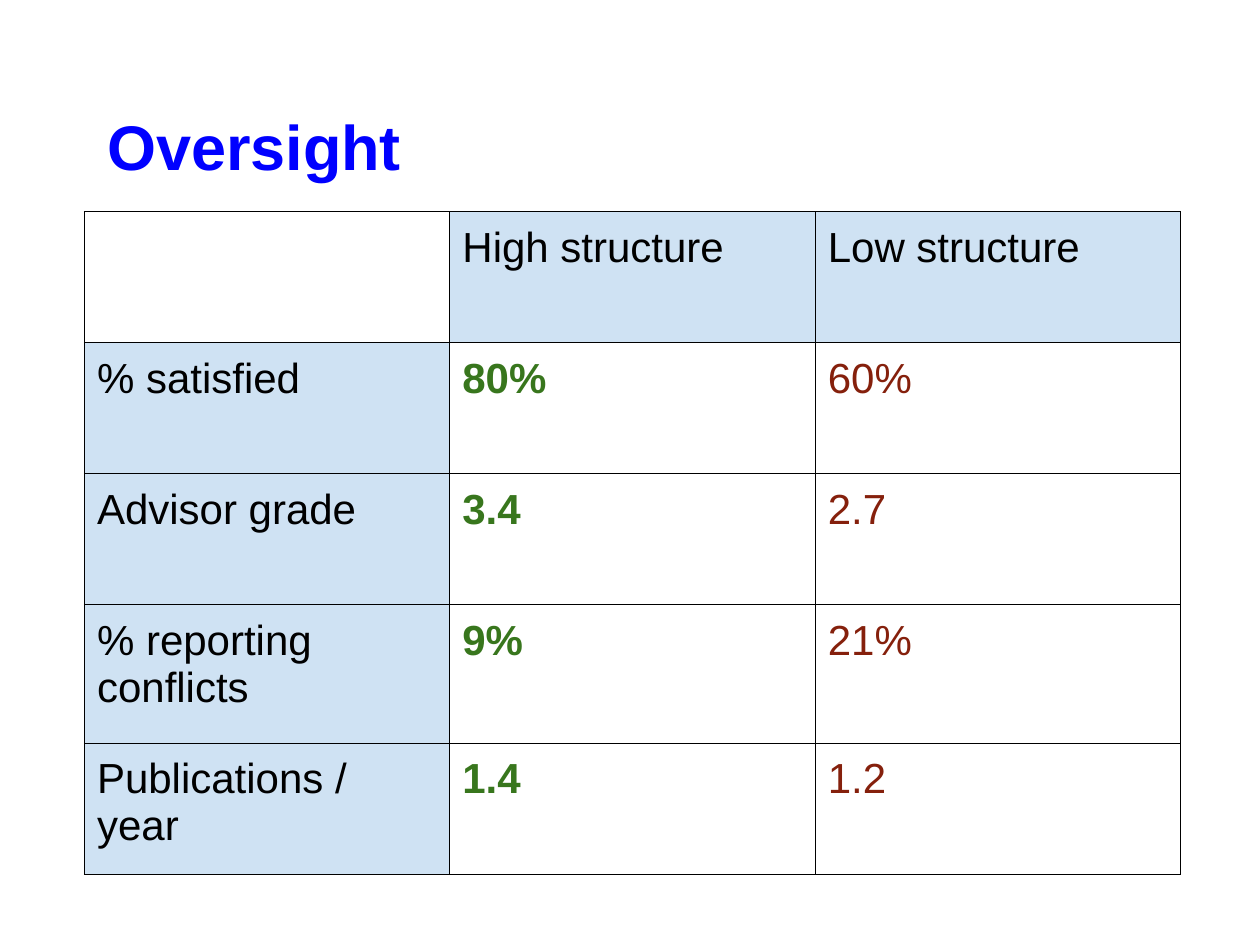
from lxml.etree import SubElement
from pptx import Presentation
from pptx.dml.color import RGBColor
from pptx.enum.text import MSO_ANCHOR, MSO_AUTO_SIZE, PP_ALIGN
from pptx.oxml.ns import qn
from pptx.util import Inches, Pt

COLORS = {
    "title": "0000FF",
    "label": "000000",
    "high": "38761D",
    "low": "85200C",
    "header_fill": "CFE2F3",
    "border": "000000",
}
MARGIN = Inches(0.1)


def add_run(paragraph, text, size, color, bold):
    run = paragraph.add_run()
    run.text = text
    run.font.name = "Arial"
    run.font.size = Pt(size)
    run.font.bold = bold
    run.font.color.rgb = RGBColor.from_string(COLORS[color])


def set_borders(cell):
    properties = cell._tc.get_or_add_tcPr()
    for side in ("a:lnL", "a:lnR", "a:lnT", "a:lnB"):
        line = SubElement(properties, qn(side), w=str(Pt(0.75)))
        fill = SubElement(line, qn("a:solidFill"))
        SubElement(fill, qn("a:srgbClr"), val=COLORS["border"])


presentation = Presentation()
presentation.slide_width = Inches(10)
presentation.slide_height = Inches(7.5)
slide = presentation.slides.add_slide(presentation.slide_layouts[5])

# Title
title = slide.shapes.title
title.left, title.top = Inches(0.5), Inches(0.3)
title.width, title.height = Inches(9), Inches(1.25)
frame = title.text_frame
frame.auto_size = MSO_AUTO_SIZE.NONE
frame.word_wrap = True
frame.vertical_anchor = MSO_ANCHOR.BOTTOM
frame.margin_left = frame.margin_right = MARGIN
frame.margin_top = frame.margin_bottom = MARGIN
paragraph = frame.paragraphs[0]
paragraph.alignment = PP_ALIGN.LEFT
indent = paragraph._p.get_or_add_pPr()
indent.set("marL", "0")
indent.set("indent", str(Inches(0.25)))
add_run(paragraph, "Oversight", 36, "title", True)

# Comparison table
rows = [
    ("", "High structure", "Low structure"),
    ("% satisfied", "80%", "60%"),
    ("Advisor grade", "3.4", "2.7"),
    ("% reporting conflicts", "9%", "21%"),
    ("Publications / year", "1.4", "1.2"),
]
row_heights = [1.04, 1.04, 1.04, 1.1, 1.04]
column_colors = ["label", "high", "low"]

table = slide.shapes.add_table(
    len(rows), 3, Inches(0.67), Inches(1.68), Inches(8.7), Inches(sum(row_heights))
).table
table.first_row = False
table.horz_banding = False
for column in table.columns:
    column.width = Inches(2.9)

for row_index, texts in enumerate(rows):
    table.rows[row_index].height = Inches(row_heights[row_index])
    for column_index, text in enumerate(texts):
        cell = table.cell(row_index, column_index)
        cell.margin_left = cell.margin_right = MARGIN
        cell.margin_top = cell.margin_bottom = MARGIN
        set_borders(cell)
        is_header = row_index == 0 or column_index == 0
        if is_header and text:
            cell.fill.solid()
            cell.fill.fore_color.rgb = RGBColor.from_string(COLORS["header_fill"])
        else:
            cell.fill.background()
        if text:
            color = "label" if is_header else column_colors[column_index]
            add_run(cell.text_frame.paragraphs[0], text, 24, color, color == "high")

presentation.save("out.pptx")
